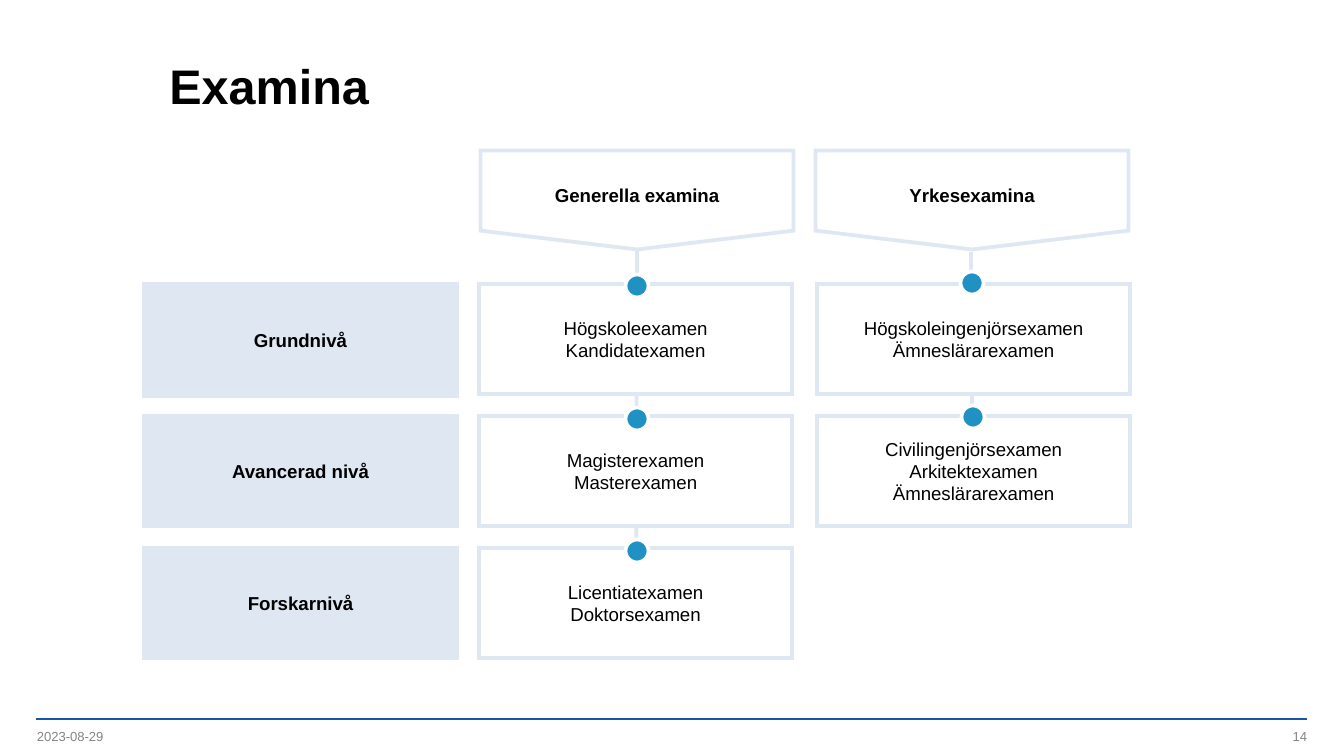
from lxml import etree
from pptx import Presentation
from pptx.dml.color import RGBColor
from pptx.enum.shapes import MSO_CONNECTOR, MSO_SHAPE
from pptx.enum.text import MSO_ANCHOR, PP_ALIGN
from pptx.oxml.ns import qn
from pptx.util import Pt

PX = 914400 / 134.4  # EMU per px
STRAIGHT = MSO_CONNECTOR.STRAIGHT
RECT, OVAL, PENTAGON = MSO_SHAPE.RECTANGLE, MSO_SHAPE.OVAL, MSO_SHAPE.PENTAGON
LEFT, CENTER, RIGHT = PP_ALIGN.LEFT, PP_ALIGN.CENTER, PP_ALIGN.RIGHT
MIDDLE = MSO_ANCHOR.MIDDLE

BLACK = RGBColor(0x00, 0x00, 0x00)
WHITE = RGBColor(0xFF, 0xFF, 0xFF)
PALE = RGBColor(0xDF, 0xE7, 0xF2)
DOT_BLUE = RGBColor(0x20, 0x91, 0xC3)
RULE_BLUE = RGBColor(0x19, 0x54, 0xA6)
GREY = RGBColor(0x84, 0x84, 0x89)

TITLE = "Examina"
LEVELS = [("Grundnivå", 112), ("Avancerad nivå", 110), ("Forskarnivå", 110)]
TRACKS = [
    {
        "heading": "Generella examina",
        "left": 479,
        "middle": 637,
        "stem": (637, 249, 636, 659),
        "degrees": [
            ["Högskoleexamen", "Kandidatexamen"],
            ["Magisterexamen", "Masterexamen"],
            ["Licentiatexamen", "Doktorsexamen"],
        ],
        "dot_centers": [(637, 286), (637, 419), (637, 551)],
    },
    {
        "heading": "Yrkesexamina",
        "left": 817,
        "middle": 972,
        "stem": (971, 252, 973, 526),
        "degrees": [
            ["Högskoleingenjörsexamen", "Ämneslärarexamen"],
            ["Civilingenjörsexamen", "Arkitektexamen", "Ämneslärarexamen"],
        ],
        "dot_centers": [(972, 283), (973, 417)],
    },
]
FOOTER = [("2023-08-29", 37, LEFT), ("14", 1005, RIGHT)]

ROW_TOPS = [284, 416, 548]
LEVEL_LEFT, BOX_W, BOX_H = 144, 313, 110
HEADING_MIDDLE, HEADING_H = 200, 99
DOT = 23


def emu(*lengths):
    return [round(length * PX) for length in lengths]


def write(frame, lines, align, **font_format):
    frame.word_wrap = True
    frame.vertical_anchor = MIDDLE
    frame.text = "\n".join(lines)
    color = font_format.pop("color", BLACK)
    for paragraph in frame.paragraphs:
        paragraph.alignment = align
        paragraph.font.color.rgb = color
        for key, value in {"name": "Arial", "size": Pt(10), **font_format}.items():
            setattr(paragraph.font, key, value)


def add_line(ends, color, width):
    line = slide.shapes.add_connector(STRAIGHT, *emu(*ends))
    line.line.color.rgb = color
    line.line.width = Pt(width)
    etree.SubElement(line.element.spPr, qn("a:effectLst"))


def add_box(kind, box, fill, outline=PALE):
    """Add a flat, sharp-cornered shape; a fill of None leaves it see-through."""
    shape = slide.shapes.add_shape(kind, *emu(*box))
    shape.shadow.inherit = False
    if fill is None:
        shape.fill.background()
    else:
        shape.fill.solid()
        shape.fill.fore_color.rgb = fill
    shape.line.color.rgb = outline
    shape.line.width = Pt(2)
    etree.SubElement(shape.element.spPr.find(qn("a:ln")), qn("a:miter"), lim="800000")
    return shape


def add_heading(text, middle):
    """Add a pentagon turned to point down, with its text kept upright."""
    box = (middle - HEADING_H / 2, HEADING_MIDDLE - BOX_W / 2, HEADING_H, BOX_W)
    heading = add_box(PENTAGON, box, None)
    heading.rotation = 90
    heading.adjustments[0] = 0.19
    write(heading.text_frame, [text], CENTER, bold=True)
    heading.element.txBody.find(qn("a:bodyPr")).set("vert", "vert270")


prs = Presentation()
prs.slide_width, prs.slide_height = emu(1344, 756)
slide = prs.slides.add_slide(prs.slide_layouts[5])

title = slide.shapes.title
title.left, title.top, title.width, title.height = emu(156, 37, 1110, 99)
write(title.text_frame, [TITLE], LEFT, size=Pt(26), bold=True)
title.text_frame.paragraphs[0].line_spacing = Pt(30)

add_line((36, 719, 1307, 719), RULE_BLUE, 1)
for text, left, align in FOOTER:
    note = slide.shapes.add_textbox(*emu(left, 728, 302, 17)).text_frame
    for side in ("left", "top", "right", "bottom"):
        setattr(note, f"margin_{side}", 0)
    write(note, [text], align, size=Pt(7), color=GREY)

for (level, height), top in zip(LEVELS, ROW_TOPS):
    label = add_box(RECT, (LEVEL_LEFT, top, BOX_W, height), PALE)
    write(label.text_frame, [level], CENTER, bold=True)

for track in TRACKS:
    add_line(track["stem"], PALE, 2)
    add_heading(track["heading"], track["middle"])
    for degrees, top in zip(track["degrees"], ROW_TOPS):
        card = add_box(RECT, (track["left"], top, BOX_W, BOX_H), WHITE)
        write(card.text_frame, degrees, CENTER)
    for x, y in track["dot_centers"]:
        add_box(OVAL, (x - DOT / 2, y - DOT / 2, DOT, DOT), DOT_BLUE, WHITE)

prs.save("out.pptx")
